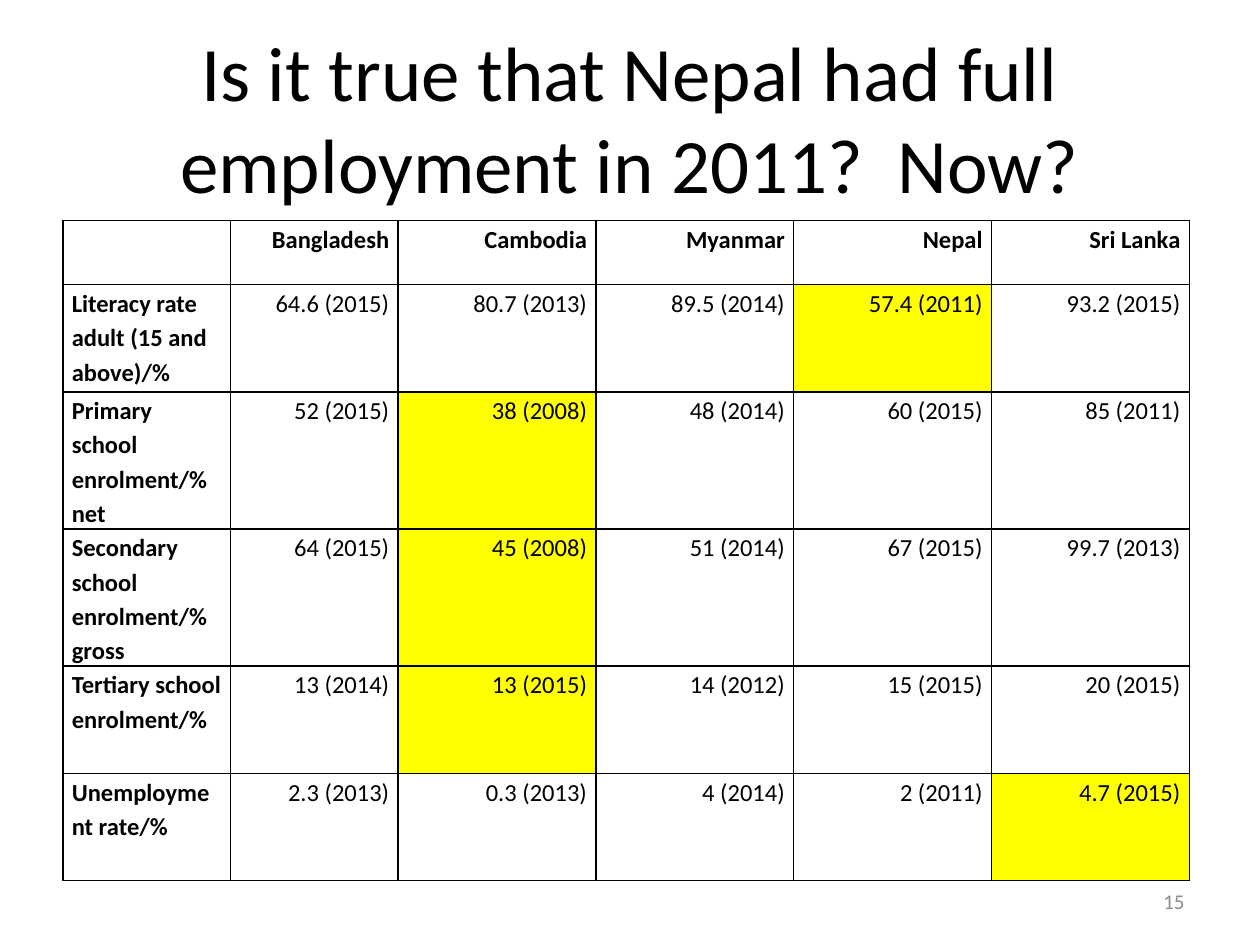
from lxml import etree
from pptx import Presentation
from pptx.dml.color import RGBColor
from pptx.enum.text import MSO_ANCHOR, PP_ALIGN
from pptx.oxml.ns import qn
from pptx.util import Inches, Pt

LEFT, CENTER, RIGHT = PP_ALIGN.LEFT, PP_ALIGN.CENTER, PP_ALIGN.RIGHT
MIDDLE = MSO_ANCHOR.MIDDLE
COLORS = {"text": "000000", "highlight": "FFFF00", "number": "8C8C8C"}
COLUMN_WIDTHS = [1.33] * 2 + [1.57] * 4
ROW_HEIGHTS = [0.51, 0.85, 0.94, 0.94, 0.85, 0.85]
INDICATORS = [
    ["", "Bangladesh", "Cambodia", "Myanmar", "Nepal", "Sri Lanka"],
    ["Literacy rate adult (15 and above)/%", "64.6 (2015)", "80.7 (2013)",
     "89.5 (2014)", "57.4 (2011)", "93.2 (2015)"],
    ["Primary school enrolment/% net", "52 (2015)", "38 (2008)",
     "48 (2014)", "60 (2015)", "85 (2011)"],
    ["Secondary school enrolment/% gross", "64 (2015)", "45 (2008)",
     "51 (2014)", "67 (2015)", "99.7 (2013)"],
    ["Tertiary school enrolment/%", "13 (2014)", "13 (2015)",
     "14 (2012)", "15 (2015)", "20 (2015)"],
    ["Unemployment rate/%", "2.3 (2013)", "0.3 (2013)",
     "4 (2014)", "2 (2011)", "4.7 (2015)"],
]
HIGHLIGHTS = {(1, 4), (2, 2), (3, 2), (4, 2), (5, 5)}


class SlideBuilder:
    """Holds the style and the current slide, and adds its elements."""

    def __init__(self, page, font):
        self.page = page
        self.font = font

    def set_text(self, frame, text, size, align, color="text", bold=False):
        frame.text = text
        para = frame.paragraphs[0]
        para.alignment = align
        for span in para.runs:
            span.font.name = self.font
            span.font.size = Pt(size)
            span.font.bold = bold
            span.font.color.rgb = RGBColor.from_string(COLORS[color])
        return para

    def title(self, text, left, top, width, height):
        box = self.page.shapes.title
        box.left, box.top = Inches(left), Inches(top)
        box.width, box.height = Inches(width), Inches(height)
        box.text_frame.vertical_anchor = MIDDLE
        self.set_text(box.text_frame, text, 44, CENTER)

    def page_number(self, text, left, top, width, height):
        box = self.page.shapes.add_textbox(
            Inches(left), Inches(top), Inches(width), Inches(height))
        box.text_frame.word_wrap = True
        box.text_frame.vertical_anchor = MIDDLE
        self.set_text(box.text_frame, text, 12, RIGHT, "number")

    def border(self, cell):
        properties = cell._tc.get_or_add_tcPr()
        for side in ("a:lnL", "a:lnR", "a:lnT", "a:lnB"):
            line = etree.SubElement(properties, qn(side), w=str(Pt(1)))
            fill = etree.SubElement(line, qn("a:solidFill"))
            etree.SubElement(fill, qn("a:srgbClr"), val=COLORS["text"])

    def table(self, rows, highlights, left, top, widths, heights):
        table = self.page.shapes.add_table(
            len(rows), len(widths), Inches(left), Inches(top),
            Inches(sum(widths)), Inches(sum(heights))).table
        table.first_row = table.horz_banding = False
        for column, width in zip(table.columns, widths):
            column.width = Inches(width)
        for row, height in zip(table.rows, heights):
            row.height = Inches(height)
        for r, values in enumerate(rows):
            for c, text in enumerate(values):
                self.cell(table.cell(r, c), text, r == 0, c == 0,
                          (r, c) in highlights)

    def cell(self, cell, text, is_header, is_label, is_highlighted):
        cell.margin_left = cell.margin_right = Inches(0.07)
        cell.margin_top = cell.margin_bottom = 0
        para = self.set_text(cell.text_frame, text, 14,
                             LEFT if is_label else RIGHT,
                             bold=is_header or is_label)
        para.line_spacing = 1.15
        para.space_after = Pt(1)
        self.border(cell)
        if is_highlighted:
            cell.fill.solid()
            cell.fill.fore_color.rgb = RGBColor.from_string(COLORS["highlight"])
        else:
            cell.fill.background()


def main():
    deck = Presentation()
    deck.slide_width, deck.slide_height = Inches(10), Inches(7.5)
    page = deck.slides.add_slide(deck.slide_layouts[5])
    builder = SlideBuilder(page, "Calibri")
    builder.title("Is it true that Nepal had full employment in 2011?  Now?",
                  0.5, 0.3, 9, 1.25)
    builder.table(INDICATORS, HIGHLIGHTS, 0.5, 1.75, COLUMN_WIDTHS, ROW_HEIGHTS)
    builder.page_number("15", 7.17, 6.95, 2.33, 0.4)
    deck.save("out.pptx")


if __name__ == "__main__":
    main()
